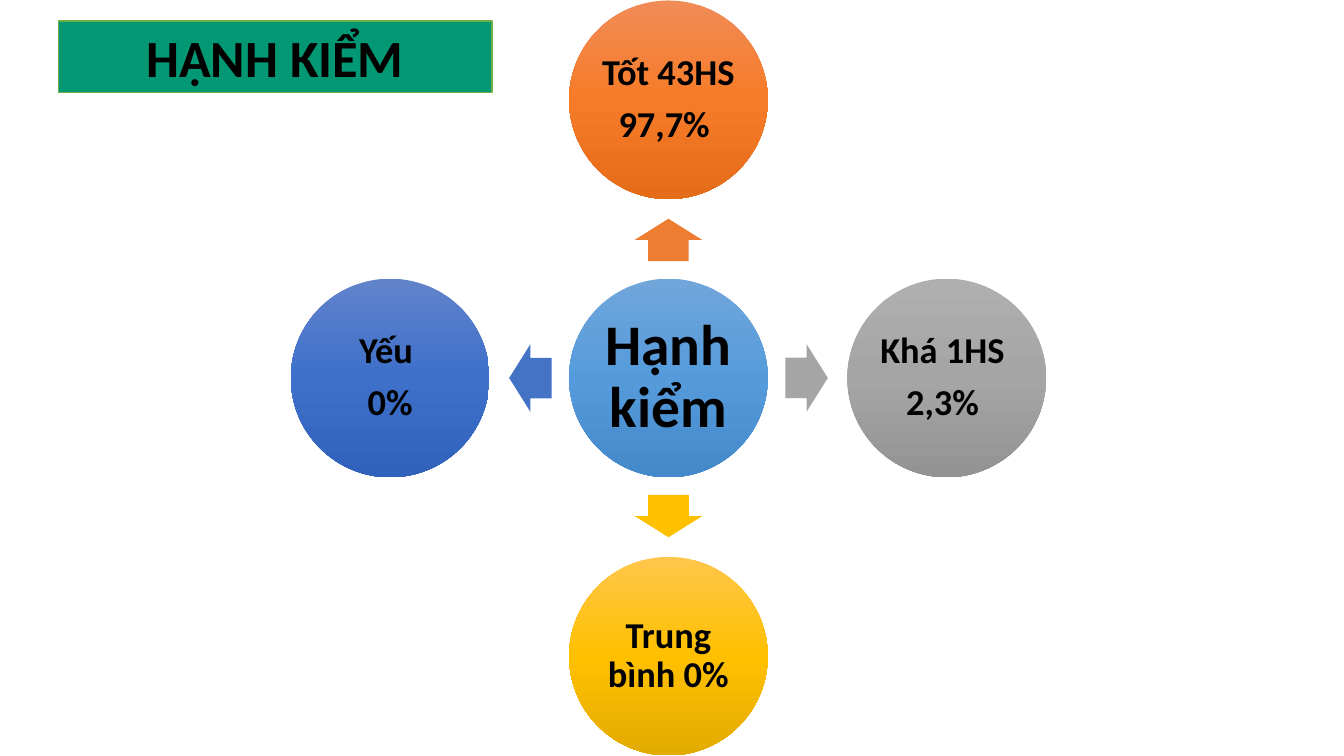
import copy
import dataclasses

import pptx
import pptx.dml.color
import pptx.enum.shapes
import pptx.enum.text
import pptx.oxml.ns
import pptx.util

Inches, Pt = pptx.util.Inches, pptx.util.Pt
RGB = pptx.dml.color.RGBColor.from_string
SHAPE = pptx.enum.shapes.MSO_SHAPE

# Content
TITLE = "HẠNH KIỂM"
HUB = ["Hạnh kiểm "]
# Lines, direction (x, y), arrow rotation, arrow colour, gradient top to bottom
RATINGS = [
    (["Tốt 43HS ", "97,7% "], (0, -1), 270, "ED7D31", ("F18C57", "F67B28", "E56C19")),
    (["Khá 1HS ", "2,3% "], (1, 0), 0, "A5A5A5", ("AFAFAF", "A5A5A5", "939393")),
    (["Trung bình 0%"], (0, 1), 90, "FFC000", ("FFC64B", "FFC000", "E3AB00")),
    (["Yếu ", "0%"], (-1, 0), 180, "4472C4", ("6183CB", "3E70CA", "3062BB")),
]


@dataclasses.dataclass(frozen=True)
class Theme:
    font: str = "Calibri"
    text: str = "000000"
    title_fill: str = "029874"
    title_line: str = "70AD47"
    hub_fill: tuple = ("71A6DB", "559BDB", "448ACA")
    title_size: float = 37.3
    hub_size: float = 41
    rating_size: float = 26


THEME = Theme()

# Layout, in inches
CENTER_X, CENTER_Y = 6.63, 3.75
DIAMETER = 1.97
RATING_DISTANCE, ARROW_DISTANCE = 2.76, 1.37
ARROW_LENGTH, ARROW_WIDTH = 0.42, 0.67


def style_paragraph(paragraph, size):
    paragraph.alignment = pptx.enum.text.PP_ALIGN.CENTER
    font = paragraph.font
    font.name, font.size, font.bold = THEME.font, Pt(size), True
    font.color.rgb = RGB(THEME.text)


def add_centered(slide, kind, x, y, width, height):
    shape = slide.shapes.add_shape(
        kind, Inches(x - width / 2), Inches(y - height / 2), Inches(width), Inches(height))
    shape.shadow.inherit = False
    shape.line.fill.background()
    return shape


def fill_gradient(shape, colors):
    shape.fill.gradient()
    shape.fill.gradient_angle = 270
    # A third stop is placed between the two default ones
    stops = shape._element.spPr.find(".//" + pptx.oxml.ns.qn("a:gsLst"))
    stops.insert(1, copy.deepcopy(stops[0]))
    for stop, position, color in zip(shape.fill.gradient_stops, (0, 0.5, 1), colors):
        stop.position = position
        stop.color.rgb = RGB(color)


def add_circle(slide, x, y, lines, size, colors, inset):
    circle = add_centered(slide, SHAPE.OVAL, x, y, DIAMETER, DIAMETER)
    fill_gradient(circle, colors)
    frame = circle.text_frame
    frame.word_wrap = True
    frame.vertical_anchor = pptx.enum.text.MSO_ANCHOR.MIDDLE
    frame.margin_left = frame.margin_right = Inches(inset)
    frame.margin_top = frame.margin_bottom = Inches(inset)
    frame.text = "\n".join(lines)
    for paragraph in frame.paragraphs:
        style_paragraph(paragraph, size)
        paragraph.line_spacing = 0.9
        paragraph.space_after = Pt(round(size * 0.35))


def add_arrow(slide, x, y, rotation, color):
    arrow = add_centered(slide, SHAPE.RIGHT_ARROW, x, y, ARROW_LENGTH, ARROW_WIDTH)
    arrow.adjustments[0], arrow.adjustments[1] = 0.6, 0.5
    arrow.rotation = rotation
    arrow.fill.solid()
    arrow.fill.fore_color.rgb = RGB(color)


def add_title(slide):
    title = slide.shapes.title
    title.left, title.top = Inches(0.58), Inches(0.21)
    title.width, title.height = Inches(4.3), Inches(0.71)
    title.fill.solid()
    title.fill.fore_color.rgb = RGB(THEME.title_fill)
    title.line.color.rgb = RGB(THEME.title_line)
    title.line.width = Pt(1)
    frame = title.text_frame
    frame.text = TITLE
    frame.auto_size = pptx.enum.text.MSO_AUTO_SIZE.NONE
    frame.vertical_anchor = pptx.enum.text.MSO_ANCHOR.MIDDLE
    style_paragraph(frame.paragraphs[0], THEME.title_size)


def main():
    deck = pptx.Presentation()
    deck.slide_width, deck.slide_height = Inches(13.33), Inches(7.5)
    slide = deck.slides.add_slide(deck.slide_layouts.get_by_name("Title Only"))

    add_title(slide)

    # Hub, then one arrow and circle for each rating
    add_circle(slide, CENTER_X, CENTER_Y, HUB, THEME.hub_size, THEME.hub_fill, 0.06)
    for lines, (dx, dy), rotation, arrow_color, colors in RATINGS:
        add_arrow(slide, CENTER_X + dx * ARROW_DISTANCE, CENTER_Y + dy * ARROW_DISTANCE,
                  rotation, arrow_color)
        add_circle(slide, CENTER_X + dx * RATING_DISTANCE, CENTER_Y + dy * RATING_DISTANCE,
                   lines, THEME.rating_size, colors, 0.03)

    deck.save("out.pptx")


if __name__ == "__main__":
    main()
